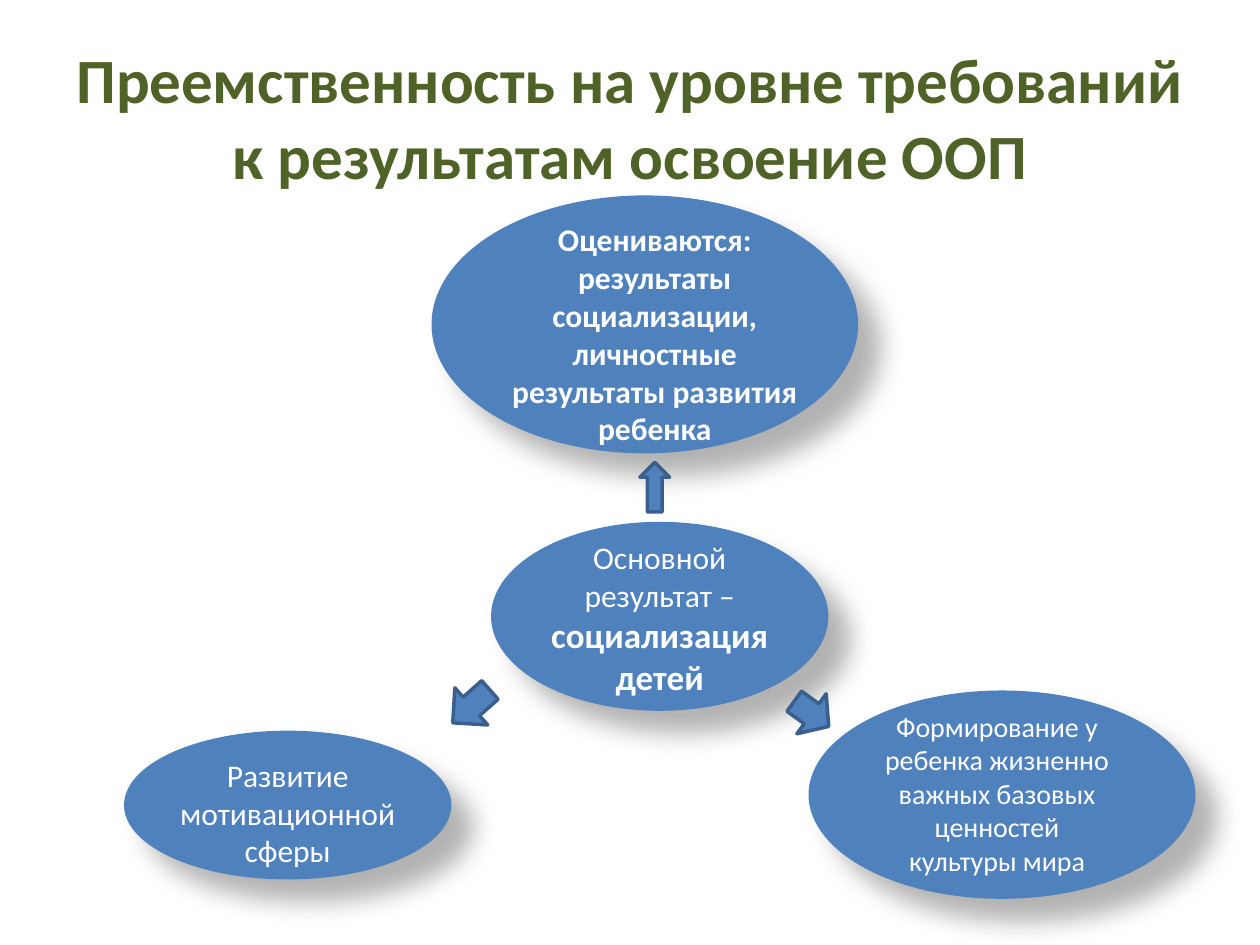
"""Build a slide on continuity of educational results."""
from lxml.etree import SubElement
from pptx import Presentation
from pptx.dml.color import RGBColor
from pptx.enum.shapes import MSO_SHAPE as SHAPE
from pptx.enum.text import MSO_ANCHOR as ANCHOR, MSO_AUTO_SIZE as AUTO, PP_ALIGN as ALIGN
from pptx.oxml.ns import qn
from pptx.util import Cm, Pt

COLORS = {"title": "4F6228", "fill": "4F81BD", "line": "3A5F8C",
          "text": "FFFFFF", "shadow": "000000"}
FONT = "Calibri"


def color(name):
    """Return the named colour."""
    return RGBColor.from_string(COLORS[name])


def add_text(slide, box, paragraphs, size=18, bold=False, fill="text",
             anchor=ANCHOR.TOP, auto=AUTO.SHAPE_TO_FIT_TEXT):
    """Add centred text; a run is a string or a (text, format) pair."""
    tf = slide.shapes.add_textbox(*map(Cm, box)).text_frame
    tf.word_wrap = True
    tf.auto_size = auto
    tf.vertical_anchor = anchor
    for i, runs in enumerate(paragraphs):
        p = tf.paragraphs[0] if i == 0 else tf.add_paragraph()
        p.alignment = ALIGN.CENTER
        for run in runs:
            text, fmt = (run, {}) if isinstance(run, str) else run
            r = p.add_run()
            r.text = text
            r.font.name = FONT
            r.font.size = Pt(fmt.get("size", size))
            r.font.bold = fmt.get("bold", bold)
            r.font.color.rgb = color(fill)


def add_filled(slide, shape, box):
    """Add a preset shape with the common fill and no shadow."""
    sp = slide.shapes.add_shape(shape, *map(Cm, box))
    sp.shadow.inherit = False
    sp.fill.solid()
    sp.fill.fore_color.rgb = color("fill")
    return sp


def add_ellipse(slide, box):
    """Add a borderless ellipse with a soft diagonal shadow."""
    sp = add_filled(slide, SHAPE.OVAL, box)
    sp.line.fill.background()
    effects = sp.element.spPr.find(qn("a:effectLst"))
    shadow = SubElement(effects, qn("a:outerShdw"), blurRad=str(Pt(15)),
                        dist=str(Pt(18)), dir="2700000", algn="tl", rotWithShape="0")
    rgb = SubElement(shadow, qn("a:srgbClr"), val=COLORS["shadow"])
    SubElement(rgb, qn("a:alpha"), val="30000")


def add_arrow(slide, shape, box, rotation=0):
    """Add an outlined block arrow."""
    sp = add_filled(slide, shape, box)
    sp.line.color.rgb = color("line")
    sp.line.width = Pt(2)
    sp.rotation = rotation


def main():
    """Compose and save the slide."""
    prs = Presentation()
    prs.slide_width, prs.slide_height = Cm(25.4), Cm(19.05)
    slide = prs.slides.add_slide(prs.slide_layouts[6])

    add_text(slide, (1.27, 0.76, 22.86, 3.18),
             [["Преемственность на уровне требований к результатам освоение ООП"]],
             size=36, bold=True, fill="title", anchor=ANCHOR.MIDDLE, auto=AUTO.NONE)

    for box in [(9.9, 10.52, 6.8, 3.81), (8.7, 3.94, 8.6, 5.2),
                (2.5, 14.73, 6.6, 3), (16.3, 13.92, 7.8, 4.2)]:
        add_ellipse(slide, box)

    add_text(slide, (9.9, 4.32, 6.6, 4.88),
             [["Оцениваются: результаты социализации, личностные "
               "результаты развития ребенка"]], bold=True)
    add_text(slide, (10.5, 10.72, 5.6, 3.5),
             [["Основной результат – ",
               ("социализация детей", {"size": 20, "bold": True})]])
    add_text(slide, (3.3, 15.11, 5, 2.57), [["Развитие мотивационной сферы"]])
    add_text(slide, (17.3, 14.17, 5.6, 3.68),
             [["Формирование у ребенка жизненно важных базовых ценностей"],
              ["культуры мира"]], size=16)

    add_arrow(slide, SHAPE.UP_ARROW, (12.9, 9.32, 0.6, 1))
    add_arrow(slide, SHAPE.RIGHT_ARROW, (15.93, 13.89, 0.86, 1), 36.2)
    add_arrow(slide, SHAPE.RIGHT_ARROW, (9, 13.74, 1, 1), 138.5)

    prs.save("out.pptx")


if __name__ == "__main__":
    main()
